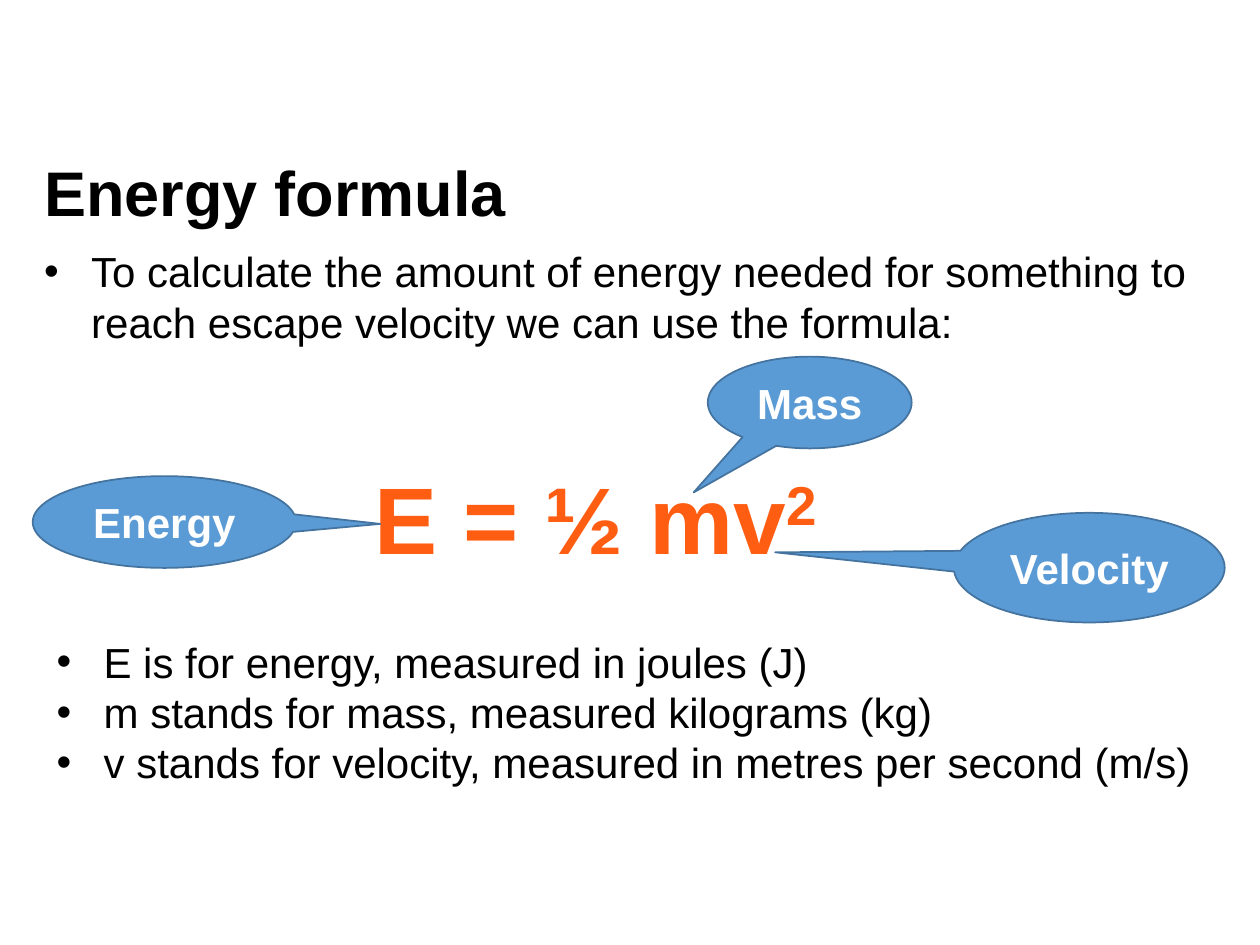
from lxml import etree
from pptx import Presentation
from pptx.dml.color import RGBColor
from pptx.enum.shapes import MSO_SHAPE
from pptx.enum.text import MSO_ANCHOR, MSO_AUTO_SIZE, PP_ALIGN
from pptx.oxml.ns import qn
from pptx.util import Cm, Pt

CALLOUT = MSO_SHAPE.OVAL_CALLOUT
MIDDLE, TOP = MSO_ANCHOR.MIDDLE, MSO_ANCHOR.TOP
LEFT, CENTER = PP_ALIGN.LEFT, PP_ALIGN.CENTER
GROW, FIXED = MSO_AUTO_SIZE.SHAPE_TO_FIT_TEXT, MSO_AUTO_SIZE.NONE

THEME = {
    "font": "Arial",
    "ink": RGBColor.from_string("000000"),
    "light": RGBColor.from_string("FFFFFF"),
    "accent": RGBColor.from_string("FF5D12"),
    "fill": RGBColor.from_string("5B9BD5"),
    "line": RGBColor.from_string("43739E"),
    "title": Pt(36),
    "body": Pt(24),
    "formula": Pt(54),
}

TITLE = ("Energy formula", (0.64, 3.02, 20.88, 1.88))
FORMULA = ("E = ½ mv", "2", (7.19, 9.14, 9.63, 2.57))
LISTS = [
    (["To calculate the amount of energy needed for something to reach "
      "escape velocity we can use the formula:"], (0.64, 4.83, 23.62, 2.31)),
    (["E is for energy, measured in joules (J)",
      "m stands for mass, measured kilograms (kg)",
      "v stands for velocity, measured in metres per second (m/s)"],
     (0.89, 12.7, 23.62, 3.33)),
]
LABELS = [
    ("Velocity", (19.23, 10.34, 5.46, 2.21), (-1.16, -0.14)),
    ("Mass", (14.27, 7.19, 4.11, 1.85), (-0.57, 0.98)),
    ("Energy", (0.66, 9.6, 5.31, 1.85), (0.82, 0.02)),
]
INDENT = Cm(0.95)


def apply(item, form):
    for name, value in form.items():
        setattr(item, name, value)


def add_run(para, text, size, color, bold=False):
    run = para.add_run()
    run.text = text
    apply(run.font, {"name": THEME["font"], "size": THEME[size], "bold": bold})
    run.font.color.rgb = THEME[color]
    return run


def add_box(slide, place, **form):
    frame = slide.shapes.add_textbox(*map(Cm, place)).text_frame
    apply(frame, {"word_wrap": True, "auto_size": GROW,
                  "vertical_anchor": TOP, **form})
    return frame


def add_bullet(para):
    props = para._p.get_or_add_pPr()
    props.set("marL", str(INDENT))
    props.set("indent", str(-INDENT))
    etree.SubElement(props, qn("a:buFont")).set("typeface", THEME["font"])
    etree.SubElement(props, qn("a:buChar")).set("char", "•")


def add_title(slide):
    text, place = TITLE
    frame = add_box(slide, place, auto_size=FIXED, vertical_anchor=MIDDLE)
    para = frame.paragraphs[0]
    apply(para, {"alignment": LEFT, "line_spacing": 0.9})
    add_run(para, text, "title", "ink", True)


def add_list(slide, items, place):
    frame = add_box(slide, place)
    for row, text in enumerate(items):
        para = frame.add_paragraph() if row else frame.paragraphs[0]
        add_bullet(para)
        add_run(para, text, "body", "ink")


def add_formula(slide):
    base, power, place = FORMULA
    para = add_box(slide, place, word_wrap=False).paragraphs[0]
    para.alignment = CENTER
    add_run(para, base, "formula", "accent", True)
    run = add_run(para, power, "formula", "accent", True)
    run._r.get_or_add_rPr().set("baseline", "30000")


def add_label(slide, text, place, tail):
    shape = slide.shapes.add_shape(CALLOUT, *map(Cm, place))
    shape.shadow.inherit = False
    for pos, value in enumerate(tail):
        shape.adjustments[pos] = value
    shape.fill.solid()
    shape.fill.fore_color.rgb = THEME["fill"]
    shape.line.color.rgb = THEME["line"]
    shape.line.width = Pt(1)
    frame = shape.text_frame
    apply(frame, {"word_wrap": True, "vertical_anchor": MIDDLE})
    para = frame.paragraphs[0]
    para.alignment = CENTER
    add_run(para, text, "body", "light", True)


def main():
    deck = Presentation()
    apply(deck, {"slide_width": Cm(25.4), "slide_height": Cm(19.05)})
    slide = deck.slides.add_slide(deck.slide_layouts[6])
    intro, terms = LISTS
    add_title(slide)
    add_list(slide, *intro)
    add_formula(slide)
    for label in LABELS:
        add_label(slide, *label)
    add_list(slide, *terms)
    deck.save("out.pptx")


if __name__ == "__main__":
    main()
